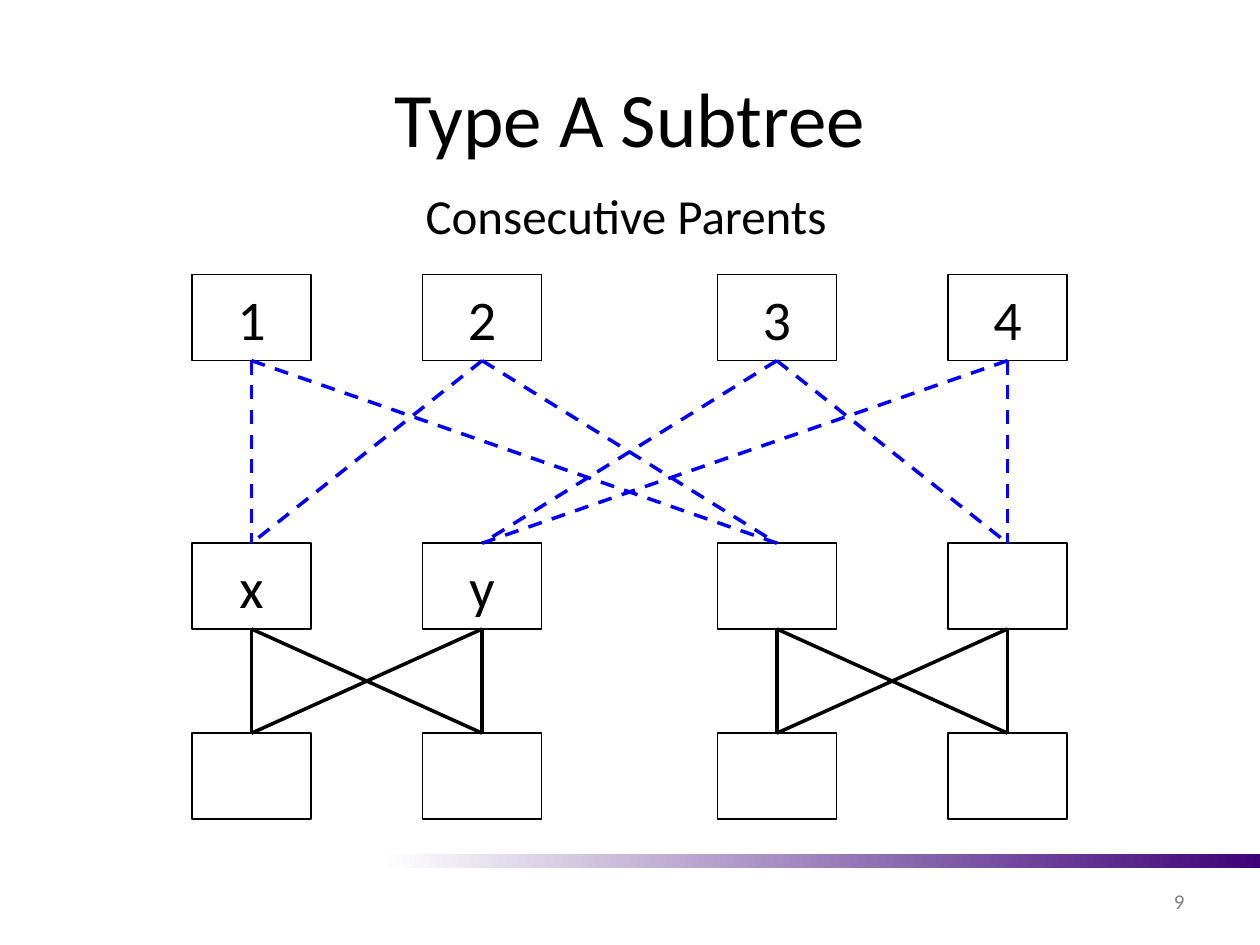
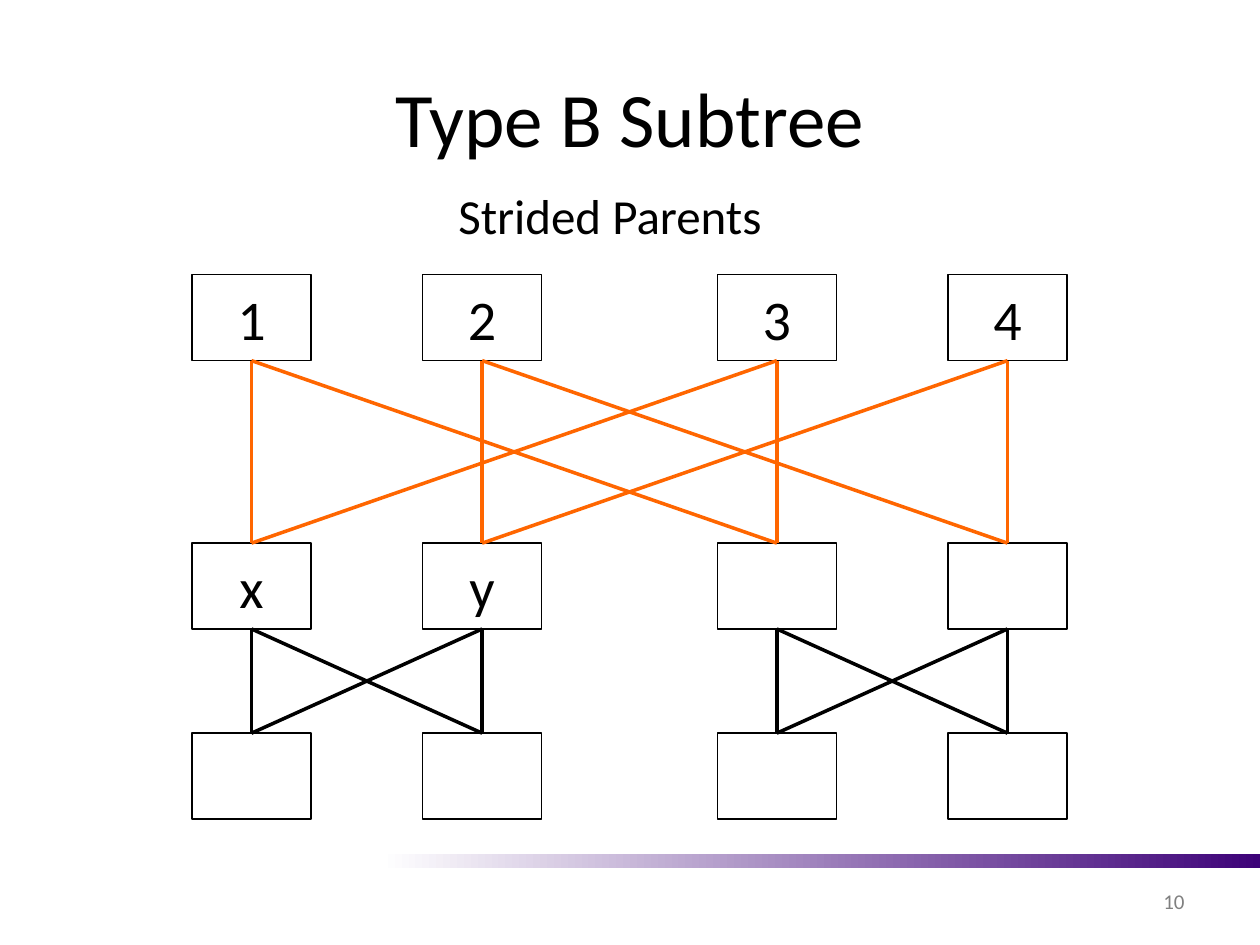
import dataclasses
import itertools

import lxml.etree
import pptx
import pptx.dml.color
import pptx.enum.dml
import pptx.enum.shapes
import pptx.enum.text
import pptx.oxml.ns
import pptx.util

Cm = pptx.util.Cm
Pt = pptx.util.Pt
Align = pptx.enum.text.PP_ALIGN
Anchor = pptx.enum.text.MSO_ANCHOR
RECTANGLE = pptx.enum.shapes.MSO_SHAPE.RECTANGLE
STRAIGHT = pptx.enum.shapes.MSO_CONNECTOR.STRAIGHT
DASH = pptx.enum.dml.MSO_LINE.DASH
FIT_SHAPE = pptx.enum.text.MSO_AUTO_SIZE.SHAPE_TO_FIT_TEXT

BOTTOM_SIDE, TOP_SIDE = 2, 0
FIRST_COLUMN, PAIR_STEP, SIDE_STEP = 3.87, 10.59, 4.65
COLUMNS = [
    FIRST_COLUMN + pair * PAIR_STEP + side * SIDE_STEP
    for pair, side in itertools.product(range(2), repeat=2)
]
ROWS = {5.54: "1234", 10.95: ["x", "y", "", ""], 14.78: [""] * 4}
NODE_WIDTH, NODE_HEIGHT = 2.4, 1.73


@dataclasses.dataclass(frozen=True)
class Theme:
    font: str = "Calibri"
    ink: str = "000000"
    paper: str = "FFFFFF"
    band: str = "3D0278"
    number: str = "808080"
    consecutive: str = "0000FF"
    strided: str = "FF6600"
    title_size: int = 44
    node_size: int = 32
    subtitle_size: int = 28
    number_size: int = 12
    outline: float = 0.75
    link: float = 2


def rgb(value):
    return pptx.dml.color.RGBColor.from_string(value)


def apply(target, values):
    for name, value in values.items():
        setattr(target, name, value)


class Painter:
    def __init__(self, deck, theme):
        self.deck = deck
        self.theme = theme
        self.page = None

    def start_page(self, title, number):
        self.page = self.deck.slides.add_slide(self.deck.slide_layouts[5])
        self.band()
        heading = self.page.shapes.title
        apply(heading, {"left": Cm(1.27), "top": Cm(0.76), "width": Cm(22.86), "height": Cm(3.18)})
        self.label(heading, title, self.theme.title_size, Align.CENTER)
        self.text(str(number), (18.2, 17.65, 5.93, 1.02), self.theme.number_size,
                  Align.RIGHT, Anchor.MIDDLE, self.theme.number)

    def band(self):
        strip = self.page.shapes.add_shape(RECTANGLE, Cm(4.55), Cm(17.22), Cm(20.85), Cm(0.28))
        strip.shadow.inherit = False
        strip.line.fill.background()
        strip.fill.gradient()
        strip.fill.gradient_angle = 0
        stops = [(0.15, self.theme.paper), (1, self.theme.band)]
        for stop, (position, color) in zip(strip.fill.gradient_stops, stops):
            stop.position = position
            stop.color.rgb = rgb(color)

    def label(self, box, text, size, align, anchor=Anchor.MIDDLE, color=None):
        box.text_frame.vertical_anchor = anchor
        para = box.text_frame.paragraphs[0]
        para.alignment = align
        span = para.add_run()
        span.text = text
        apply(span.font, {"name": self.theme.font, "size": Pt(size)})
        span.font.color.rgb = rgb(color or self.theme.ink)

    def text(self, text, place, size, align, anchor, color=None, grow=False):
        box = self.page.shapes.add_textbox(*map(Cm, place))
        box.text_frame.word_wrap = not grow
        if grow:
            box.text_frame.auto_size = FIT_SHAPE
        self.label(box, text, size, align, anchor, color)

    def subtitle(self, text, left, width):
        self.text(text, (left, 3.61, width, 1.45), self.theme.subtitle_size,
                  Align.LEFT, Anchor.TOP, grow=True)

    def node(self, name, left, top):
        box = self.page.shapes.add_shape(
            RECTANGLE, Cm(left), Cm(top), Cm(NODE_WIDTH), Cm(NODE_HEIGHT))
        box.shadow.inherit = False
        box.fill.solid()
        box.fill.fore_color.rgb = rgb(self.theme.paper)
        box.line.color.rgb = rgb(self.theme.ink)
        box.line.width = Pt(self.theme.outline)
        if name:
            self.label(box, name, self.theme.node_size, Align.CENTER)
        return box

    def link(self, parent, child, color, dash=None):
        line = self.page.shapes.add_connector(STRAIGHT, 0, 0, 0, 0)
        line.begin_connect(parent, BOTTOM_SIDE)
        line.end_connect(child, TOP_SIDE)
        line.line.color.rgb = rgb(color)
        apply(line.line, {"width": Pt(self.theme.link), "dash_style": dash})
        lxml.etree.SubElement(line.element.spPr, pptx.oxml.ns.qn("a:effectLst"))

    def subtree(self, parents_of, color, dash=None):
        parents, middle, leaves = [
            [self.node(name, left, top) for name, left in zip(names, COLUMNS)]
            for top, names in ROWS.items()
        ]
        for upper, lower in itertools.product(range(4), repeat=2):
            if upper // 2 == lower // 2:
                self.link(middle[upper], leaves[lower], self.theme.ink)
            if upper in parents_of(lower):
                self.link(parents[upper], middle[lower], color, dash)


def consecutive_parents(child):
    first = child % 2 * 2
    return first, first + 1


def strided_parents(child):
    first = child % 2
    return first, first + 2


def main():
    deck = pptx.Presentation()
    apply(deck, {"slide_width": Cm(25.4), "slide_height": Cm(19.05)})
    theme = Theme()
    painter = Painter(deck, theme)

    painter.start_page("Type A Subtree", 9)
    painter.subtree(consecutive_parents, theme.consecutive, DASH)
    painter.subtitle("Consecutive Parents", 8.33, 8.74)

    painter.start_page("Type B Subtree", 10)
    painter.subtree(strided_parents, theme.strided)
    painter.subtitle("Strided Parents", 8.99, 6.73)

    deck.save("out.pptx")


if __name__ == "__main__":
    main()
